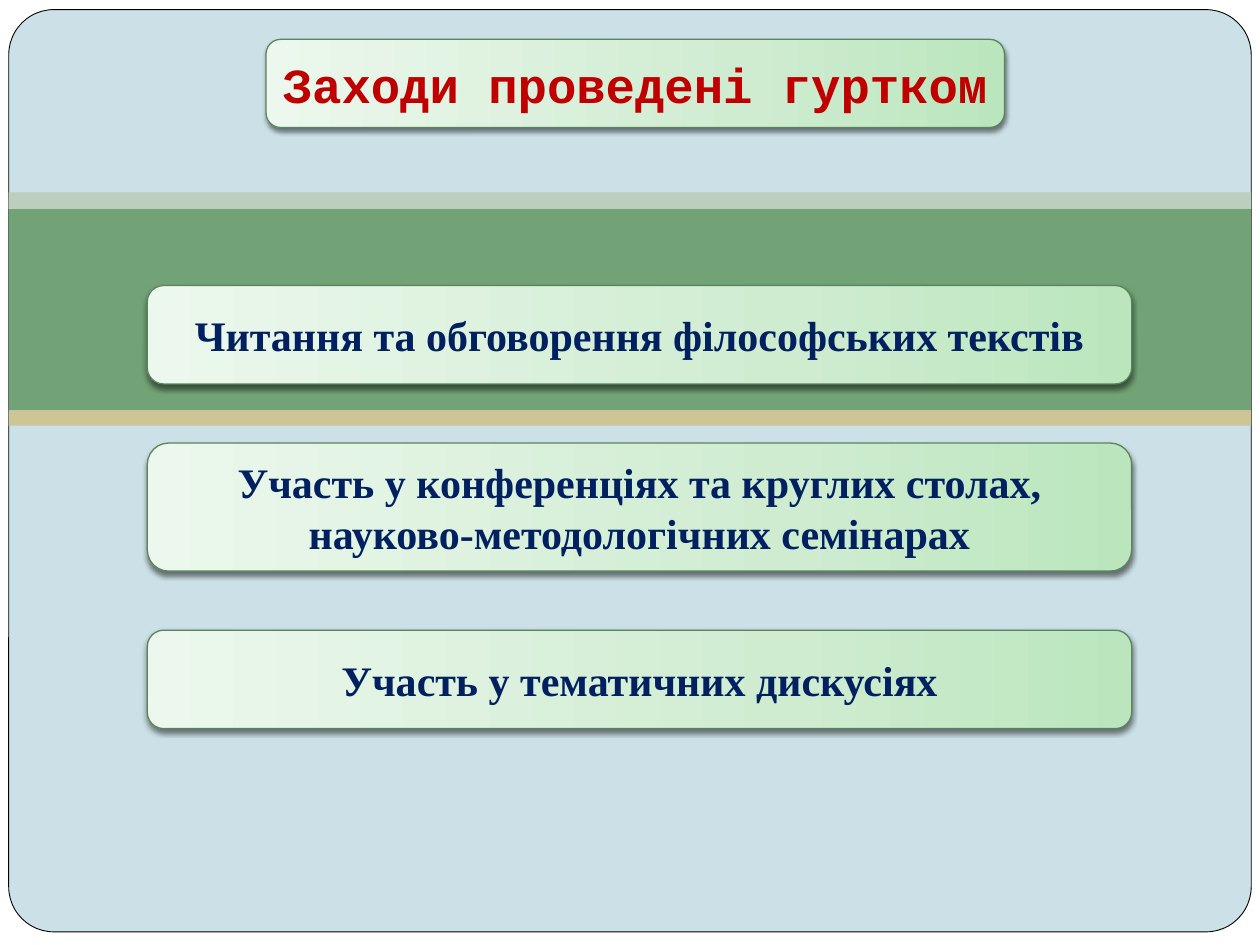
from dataclasses import dataclass

from lxml.etree import SubElement
from pptx import Presentation
from pptx.dml.color import RGBColor
from pptx.enum.shapes import MSO_SHAPE as Shape
from pptx.enum.text import MSO_ANCHOR as Anchor, PP_ALIGN as Align
from pptx.oxml.ns import qn
from pptx.util import Pt


@dataclass(frozen=True)
class Theme:
    page: str = "FFFFFF"
    panel: str = "CBE1E7"
    panel_line: str = "000000"
    band: str = "72A376"
    band_top: str = "BCCEBD"
    band_bottom: str = "CEC597"
    card_stops: tuple = ((0, "BBE6BD"), (35, "CFECD1"), (100, "ECF8ED"))
    card_line: str = "59845D"
    shadow: str = "000000"
    title_font: str = "Courier New"
    title_size: int = 28
    title_color: str = "C00000"
    body_font: str = "Times New Roman"
    body_size: int = 24
    body_color: str = "002060"


THEME = Theme()
WIDTH, HEIGHT = 720, 540
PANEL_LEFT, PANEL_WIDTH = 5, 710
CARD_LEFT, CARD_WIDTH, CARD_TOP, CARD_GAP = 84.2, 562.5, 163.2, 33.75
CARDS = [
    ("Читання та обговорення філософських текстів", 56.25),
    ("Участь у конференціях та круглих столах, науково-методологічних семінарах", 73.2),
    ("Участь у тематичних дискусіях", 56.25),
]


def add_block(slide, kind, left, top, width, height, color):
    """Add a plain filled shape without line or shadow."""
    shape = slide.shapes.add_shape(kind, Pt(left), Pt(top), Pt(width), Pt(height))
    shape.shadow.inherit = False
    shape.fill.solid()
    shape.fill.fore_color.rgb = RGBColor.from_string(color)
    shape.line.fill.background()
    return shape


def set_line(shape, color, width):
    shape.line.color.rgb = RGBColor.from_string(color)
    shape.line.width = Pt(width)


def add_color(parent, color):
    return SubElement(parent, qn("a:srgbClr"), val=color)


def set_gradient(shape, stops):
    shape.fill.gradient()
    shape.fill.gradient_angle = 180
    stop_list = shape._element.spPr.find(".//" + qn("a:gsLst"))
    for stop in list(stop_list):
        stop_list.remove(stop)
    for position, color in stops:
        add_color(SubElement(stop_list, qn("a:gs"), pos=str(position * 1000)), color)


def set_shadow(shape, color):
    effects = shape._element.spPr.find(qn("a:effectLst"))
    shadow = SubElement(effects, qn("a:outerShdw"), blurRad=str(Pt(3)),
                        dist=str(Pt(2)), dir="5400000", rotWithShape="0")
    SubElement(add_color(shadow, color), qn("a:alpha"), val="50000")


def add_card(slide, kind, box, text, font_name, size, color, wrap=True):
    """Add a gradient card with centred bold text."""
    shape = add_block(slide, kind, *box, THEME.panel)
    set_gradient(shape, THEME.card_stops)
    set_line(shape, THEME.card_line, 0.75)
    set_shadow(shape, THEME.shadow)
    frame = shape.text_frame
    frame.word_wrap = wrap
    frame.vertical_anchor = Anchor.MIDDLE
    paragraph = frame.paragraphs[0]
    paragraph.text = text
    paragraph.alignment = Align.CENTER
    font = paragraph.font
    font.name, font.size, font.bold = font_name, Pt(size), True
    font.color.rgb = RGBColor.from_string(color)


def add_backdrop(slide):
    background = slide.background.fill
    background.solid()
    background.fore_color.rgb = RGBColor.from_string(THEME.panel)
    add_block(slide, Shape.RECTANGLE, 0, 0, WIDTH, HEIGHT, THEME.page)
    panel = add_block(slide, Shape.ROUNDED_RECTANGLE, PANEL_LEFT, 5.5,
                      PANEL_WIDTH, 527, THEME.panel)
    panel.adjustments[0] = 0.049
    set_line(panel, THEME.panel_line, 0.5)
    # Green band with its two edge strips
    for top, height, color in ((114.5, 120, THEME.band),
                               (110, 9.4, THEME.band_top),
                               (234.5, 8.7, THEME.band_bottom)):
        add_block(slide, Shape.RECTANGLE, PANEL_LEFT, top, PANEL_WIDTH, height, color)


def main():
    presentation = Presentation()
    presentation.slide_width, presentation.slide_height = Pt(WIDTH), Pt(HEIGHT)
    slide = presentation.slides.add_slide(presentation.slide_layouts[6])
    add_backdrop(slide)

    # Title
    add_card(slide, Shape.ROUNDED_RECTANGLE, (152, 22.5, 422, 50.4),
             "Заходи проведені гуртком", THEME.title_font, THEME.title_size,
             THEME.title_color, wrap=False)

    # Activities, stacked with equal gaps
    top = CARD_TOP
    for text, height in CARDS:
        add_card(slide, Shape.FLOWCHART_ALTERNATE_PROCESS,
                 (CARD_LEFT, top, CARD_WIDTH, height), text,
                 THEME.body_font, THEME.body_size, THEME.body_color)
        top += height + CARD_GAP

    presentation.save("out.pptx")


if __name__ == "__main__":
    main()
